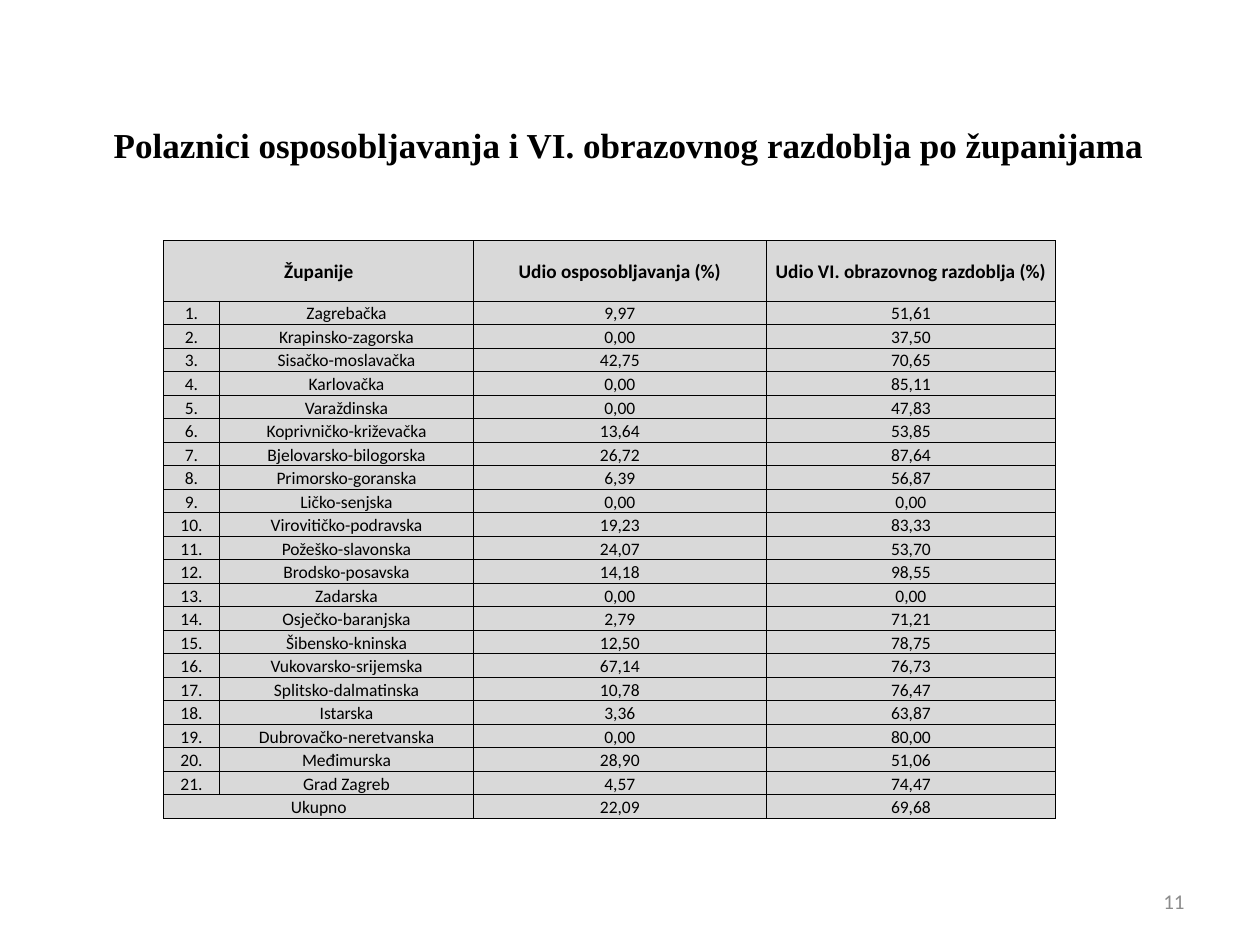
from dataclasses import dataclass

from lxml import etree
from pptx import Presentation
from pptx.dml.color import RGBColor
from pptx.enum.text import MSO_ANCHOR, PP_ALIGN
from pptx.oxml.ns import qn
from pptx.table import Table, _Cell
from pptx.text.text import _Paragraph
from pptx.util import Inches, Pt

CENTER = PP_ALIGN.CENTER
RIGHT = PP_ALIGN.RIGHT
MIDDLE = MSO_ANCHOR.MIDDLE
BOTTOM = MSO_ANCHOR.BOTTOM

BLACK = RGBColor(0x00, 0x00, 0x00)
CELL_GRAY = RGBColor(0xD9, 0xD9, 0xD9)
NUMBER_GRAY = RGBColor(0x8C, 0x8C, 0x8C)

COLUMN_WIDTHS = (0.44, 2.02, 2.32, 2.3)
TABLE_HEIGHT = 4.59
HEADER_HEIGHT = 0.48


@dataclass(frozen=True)
class County:
    name: str
    training_share: str
    sixth_period_share: str


@dataclass(frozen=True)
class TextStyle:
    font_name: str
    size: float
    color: RGBColor
    bold: bool = False
    alignment: PP_ALIGN = CENTER


TITLE_STYLE = TextStyle("Times New Roman", 20, BLACK, bold=True)
HEADER_STYLE = TextStyle("Calibri", 11, BLACK, bold=True)
BODY_STYLE = TextStyle("Calibri", 10, BLACK)
NUMBER_STYLE = TextStyle("Calibri", 12, NUMBER_GRAY, alignment=RIGHT)

HEADER = County("Županije", "Udio osposobljavanja (%)", "Udio VI. obrazovnog razdoblja (%)")
TOTAL = County("Ukupno", "22,09", "69,68")
COUNTIES = (
    County("Zagrebačka", "9,97", "51,61"),
    County("Krapinsko-zagorska", "0,00", "37,50"),
    County("Sisačko-moslavačka", "42,75", "70,65"),
    County("Karlovačka", "0,00", "85,11"),
    County("Varaždinska", "0,00", "47,83"),
    County("Koprivničko-križevačka", "13,64", "53,85"),
    County("Bjelovarsko-bilogorska", "26,72", "87,64"),
    County("Primorsko-goranska", "6,39", "56,87"),
    County("Ličko-senjska", "0,00", "0,00"),
    County("Virovitičko-podravska", "19,23", "83,33"),
    County("Požeško-slavonska", "24,07", "53,70"),
    County("Brodsko-posavska", "14,18", "98,55"),
    County("Zadarska", "0,00", "0,00"),
    County("Osječko-baranjska", "2,79", "71,21"),
    County("Šibensko-kninska", "12,50", "78,75"),
    County("Vukovarsko-srijemska", "67,14", "76,73"),
    County("Splitsko-dalmatinska", "10,78", "76,47"),
    County("Istarska", "3,36", "63,87"),
    County("Dubrovačko-neretvanska", "0,00", "80,00"),
    County("Međimurska", "28,90", "51,06"),
    County("Grad Zagreb", "4,57", "74,47"),
)


def write_paragraph(paragraph: _Paragraph, text: str, style: TextStyle) -> None:
    paragraph.text = text
    paragraph.alignment = style.alignment
    font = paragraph.font
    font.name = style.font_name
    font.size = Pt(style.size)
    font.bold = style.bold
    font.color.rgb = style.color


def add_borders(cell: _Cell) -> None:
    properties = cell._tc.get_or_add_tcPr()
    for side in ("a:lnL", "a:lnR", "a:lnT", "a:lnB"):
        line = etree.SubElement(properties, qn(side), w=str(Pt(0.5)))
        fill = etree.SubElement(line, qn("a:solidFill"))
        etree.SubElement(fill, qn("a:srgbClr"), val=str(BLACK))


def format_cell(cell: _Cell, text: str, style: TextStyle, anchor: MSO_ANCHOR) -> None:
    cell.margin_left = cell.margin_top = cell.margin_right = Inches(0.01)
    cell.margin_bottom = 0
    cell.vertical_anchor = anchor
    add_borders(cell)
    cell.fill.solid()
    cell.fill.fore_color.rgb = CELL_GRAY
    write_paragraph(cell.text_frame.paragraphs[0], text, style)


def fill_row(table: Table, row: int, county: County, number: str = "",
             style: TextStyle = BODY_STYLE, value_anchor: MSO_ANCHOR = BOTTOM) -> None:
    if number:
        labels, label_anchor = (number, county.name), BOTTOM
    else:
        labels, label_anchor = (county.name, ""), MIDDLE
        table.cell(row, 0).merge(table.cell(row, 1))
    values = (county.training_share, county.sixth_period_share)
    for column, text in enumerate(labels + values):
        anchor = label_anchor if column < len(labels) else value_anchor
        format_cell(table.cell(row, column), text, style, anchor)


def main() -> None:
    presentation = Presentation()
    presentation.slide_width = Inches(10)
    presentation.slide_height = Inches(7.5)
    slide = presentation.slides.add_slide(presentation.slide_layouts[5])

    title = slide.shapes.title
    title.left, title.top = Inches(0.49), Inches(0.52)
    title.width, title.height = Inches(9), Inches(1.25)
    title.text_frame.vertical_anchor = MIDDLE
    write_paragraph(title.text_frame.paragraphs[0], "Polaznici osposobljavanja i VI. obrazovnog razdoblja po županijama", TITLE_STYLE)

    row_count = len(COUNTIES) + 2
    table = slide.shapes.add_table(
        row_count, len(COLUMN_WIDTHS), Inches(1.3), Inches(1.91),
        Inches(sum(COLUMN_WIDTHS)), Inches(TABLE_HEIGHT)).table
    for column, width in zip(table.columns, COLUMN_WIDTHS):
        column.width = Inches(width)
    body_height = (TABLE_HEIGHT - HEADER_HEIGHT) / (row_count - 1)
    for index, row in enumerate(table.rows):
        row.height = Inches(body_height if index else HEADER_HEIGHT)

    fill_row(table, 0, HEADER, style=HEADER_STYLE, value_anchor=MIDDLE)
    for index, county in enumerate(COUNTIES, start=1):
        fill_row(table, index, county, number=f"{index}.")
    fill_row(table, row_count - 1, TOTAL)

    number_box = slide.shapes.add_textbox(Inches(7.17), Inches(6.95), Inches(2.33), Inches(0.4))
    number_box.text_frame.word_wrap = True
    number_box.text_frame.vertical_anchor = MIDDLE
    write_paragraph(number_box.text_frame.paragraphs[0], "11", NUMBER_STYLE)

    presentation.save("out.pptx")


if __name__ == "__main__":
    main()
